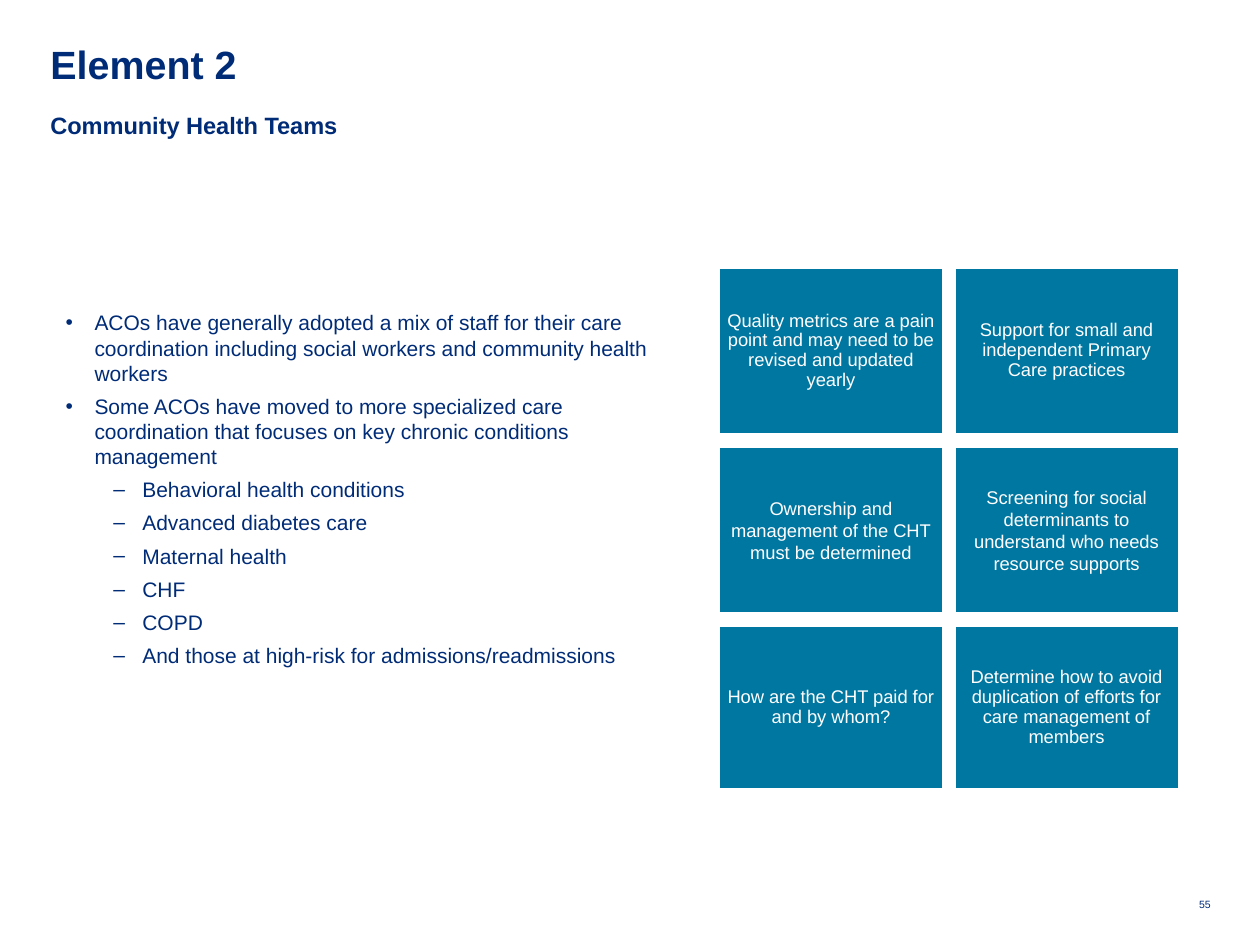
from pptx import Presentation
from pptx.dml.color import RGBColor
from pptx.enum.shapes import MSO_SHAPE
from pptx.enum.text import MSO_ANCHOR, MSO_AUTO_SIZE, PP_ALIGN
from pptx.oxml.ns import qn
from pptx.util import Inches, Pt
from lxml.etree import SubElement

# Content
TITLE = "Element 2"
SUBTITLE = "Community Health Teams"
PAGE = "55"
BULLETS = [
    (0, "ACOs have generally adopted a mix of staff for their care coordination "
        "including social workers and community health workers"),
    (0, "Some ACOs have moved to more specialized care coordination that focuses "
        "on key chronic conditions management"),
    (1, "Behavioral health conditions"),
    (1, "Advanced diabetes care"),
    (1, "Maternal health"),
    (1, "CHF"),
    (1, "COPD"),
    (1, "And those at high-risk for admissions/readmissions"),
]
# One row of cards per line: height, line spacing of each card, texts
CARD_ROWS = [
    (1.33, (0.9, 0.9), ("Quality metrics are a pain point and may need to be revised and updated yearly",
                        "Support for small and independent Primary Care practices")),
    (1.33, (1, 1), ("Ownership and management of the CHT must be determined",
                    "Screening for social determinants to understand who needs resource supports")),
    (1.31, (0.9, 0.9), ("How are the CHT paid for and by whom?",
                        "Determine how to avoid duplication of efforts for care management of members")),
]

# Style
FONT, NAVY, TEAL, WHITE = "Arial", "002C77", "0077A0", "FFFFFF"
BULLET_STYLE = [("•", 0.23), ("–", 0.61)]  # character and left margin by level
HANGING = 0.23
CARD_LEFT, CARD_TOP, CARD_W = 5.7, 2.12, 1.79
COL_PITCH, ROW_PITCH = 1.87, 1.42


def rgb(value):
    return RGBColor.from_string(value)


def place(sp, left, top, width, height):
    sp.left, sp.top = Inches(left), Inches(top)
    sp.width, sp.height = Inches(width), Inches(height)


def frame(sp, inset=0, anchor=MSO_ANCHOR.TOP):
    tf = sp.text_frame
    tf.word_wrap = True
    tf.auto_size = MSO_AUTO_SIZE.NONE
    tf.vertical_anchor = anchor
    tf.margin_left = tf.margin_right = tf.margin_top = tf.margin_bottom = Inches(inset)
    return tf


def write(p, text, size, color=NAVY, bold=False, align=PP_ALIGN.LEFT, spacing=1.0, after=0):
    p.alignment, p.line_spacing = align, spacing
    p.space_before, p.space_after = Pt(0), Pt(after)
    r = p.add_run()
    r.text = text
    r.font.name, r.font.size, r.font.bold = FONT, Pt(size), bold
    r.font.color.rgb = rgb(color)


def set_bullet(p, char=None, left=0):
    pPr = p._p.get_or_add_pPr()
    pPr.set("marL", str(Inches(left)))
    pPr.set("indent", str(-Inches(HANGING) if char else 0))
    if char:
        SubElement(pPr, qn("a:buFont")).set("typeface", FONT)
        SubElement(pPr, qn("a:buChar")).set("char", char)
    else:
        SubElement(pPr, qn("a:buNone"))


prs = Presentation()
prs.slide_width, prs.slide_height = Inches(10), Inches(7.5)
s = prs.slides.add_slide(prs.slide_layouts.get_by_name("Two Content"))
title, subtitle, bullets = list(s.placeholders)[:3]

# Title and subtitle
place(title, 0.4, 0.39, 9.21, 0.54)
write(frame(title).paragraphs[0], TITLE, 22.5, bold=True, spacing=0.8)
place(subtitle, 0.4, 0.88, 9.21, 0.35)
p = frame(subtitle).paragraphs[0]
set_bullet(p)
write(p, SUBTITLE, 13.5, bold=True, after=4.5)

# Bullet list
place(bullets, 0.52, 2.46, 4.8, 2.91)
tf = frame(bullets)
for i, (level, text) in enumerate(BULLETS):
    p = tf.add_paragraph() if i else tf.paragraphs[0]
    p.level = level
    set_bullet(p, *BULLET_STYLE[level])
    write(p, text, 12, after=4.5)

# Card grid
for row, (height, spacings, texts) in enumerate(CARD_ROWS):
    for col, (spacing, text) in enumerate(zip(spacings, texts)):
        sp = s.shapes.add_shape(
            MSO_SHAPE.RECTANGLE,
            Inches(CARD_LEFT + col * COL_PITCH), Inches(CARD_TOP + row * ROW_PITCH),
            Inches(CARD_W), Inches(height))
        sp.shadow.inherit = False
        sp.fill.solid()
        sp.fill.fore_color.rgb = rgb(TEAL)
        sp.line.color.rgb = rgb(WHITE)
        sp.line.width = Pt(2)
        tf = frame(sp, 0.06, MSO_ANCHOR.MIDDLE)
        write(tf.paragraphs[0], text, 10.5, WHITE, align=PP_ALIGN.CENTER, spacing=spacing)

# Page number
page = s.shapes.add_textbox(Inches(9.38), Inches(7.13), Inches(0.23), Inches(0.1))
write(frame(page).paragraphs[0], PAGE, 6, align=PP_ALIGN.RIGHT)

prs.save("out.pptx")
